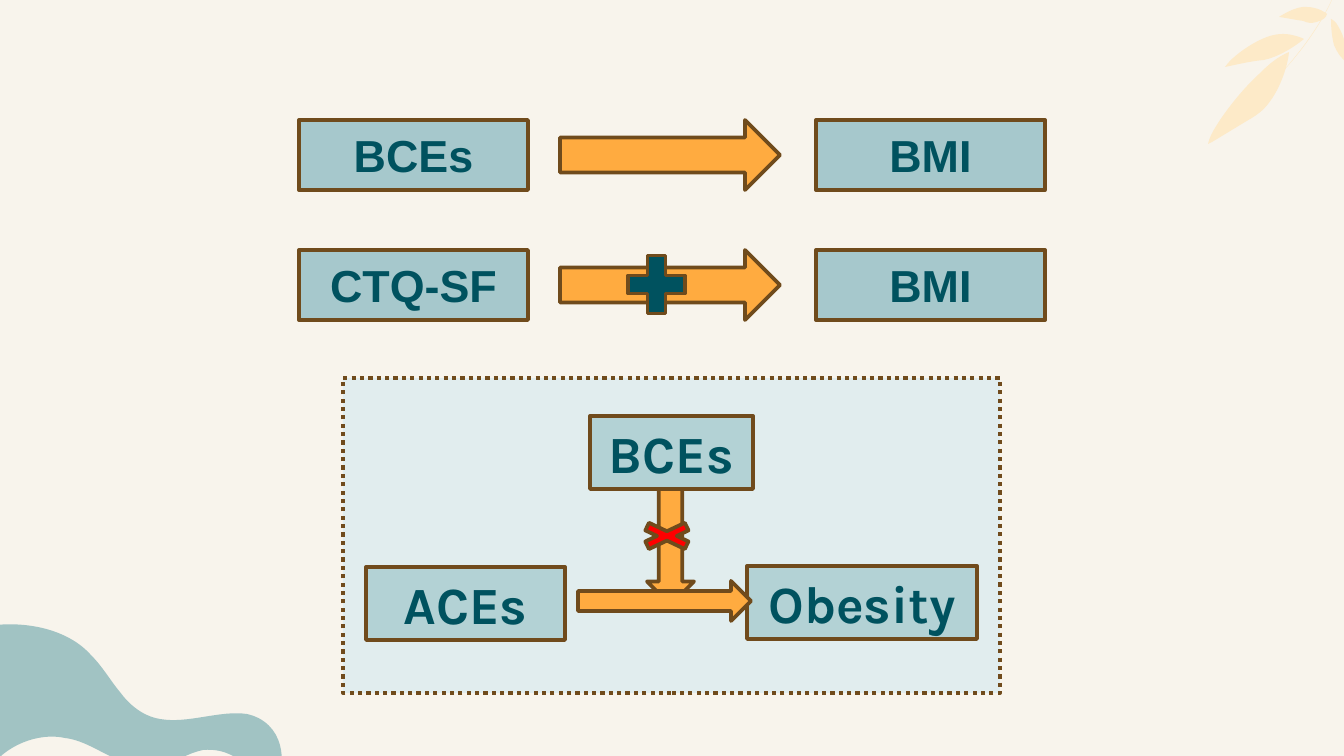
"""Build a slide of pathway diagrams linking childhood experiences to body mass."""
from dataclasses import dataclass
from typing import Optional

import lxml.etree
import pptx
import pptx.dml.color
import pptx.enum.dml
import pptx.enum.shapes
import pptx.enum.text
import pptx.oxml.ns
import pptx.util

RGB = pptx.dml.color.RGBColor
KIND = pptx.enum.shapes.MSO_SHAPE
PX = 914400 / 134.4

CREAM = RGB(0xF8, 0xF4, 0xEC)
LEAF = RGB(0xFD, 0xEA, 0xC8)
SEA = RGB(0x6B, 0xA4, 0xAA)
PANEL = RGB(0xE1, 0xED, 0xEE)
PALE_TEAL = RGB(0xB3, 0xD2, 0xD5)
TEAL = RGB(0xA6, 0xC8, 0xCC)
DARK_TEAL = RGB(0x00, 0x52, 0x5F)
ORANGE = RGB(0xFF, 0xAB, 0x40)
BROWN = RGB(0x70, 0x4B, 0x1C)
RED = RGB(0xFF, 0x00, 0x00)

Point = tuple[int, int]


@dataclass
class Block:
    kind: KIND
    x: int
    y: int
    w: int
    h: int
    fill: RGB
    text: str = ""
    font: str = "Arial"
    size: int = 24
    rotation: int = 0
    line: float = 2
    dash: Optional[pptx.enum.dml.MSO_LINE] = None


@dataclass
class Outline:
    start: Point
    segments: list[tuple[Point, ...]]
    fill: RGB
    alpha: int = 100


STEM = Outline((1335, -7), [
    ((1324, 18), (1303, 53), (1262, 93)), ((1303, 54), (1325, 18), (1335, -7))], LEAF)
LARGE_LEAF = Outline((1289, 52), [
    ((1277, 57), (1268, 65), (1258, 75)), ((1244, 88), (1231, 104), (1220, 120)),
    ((1215, 128), (1210, 135), (1208, 144)), ((1212, 142),), ((1245, 122),),
    ((1250, 119), (1254, 117), (1259, 113)), ((1275, 101), (1287, 72), (1289, 52))], LEAF)
MIDDLE_LEAF = Outline((1292, 35), [
    ((1284, 33), (1275, 34), (1267, 37)), ((1254, 42), (1242, 50), (1232, 59)),
    ((1229, 62), (1227, 64), (1225, 67)), ((1239, 64), (1252, 61), (1264, 60)),
    ((1278, 57), (1293, 48), (1304, 39)), ((1300, 37), (1296, 36), (1292, 35))], LEAF)
EDGE_LEAF = Outline((1331, 19), [
    ((1331, 28), (1332, 37), (1334, 45)), ((1337, 52), (1341, 59), (1348, 63)),
    ((1347, 50), (1345, 37), (1338, 26)), ((1336, 22), (1333, 20), (1331, 19))], LEAF)
TOP_LEAF = Outline((1314, 8), [
    ((1311, 7), (1306, 7), (1303, 7)), ((1295, 8), (1287, 12), (1279, 17)),
    ((1281, 17), (1283, 18), (1285, 18)), ((1291, 19), (1296, 20), (1303, 21)),
    ((1305, 22), (1308, 23), (1312, 23)), ((1317, 22), (1325, 21), (1327, 14)),
    ((1323, 11), (1319, 9), (1314, 8))], LEAF)
WAVE = Outline((280, 745), [
    ((282, 752), (282, 758), (282, 765)), ((255, 774),),
    ((241, 759), (226, 748), (203, 750)), ((188, 753), (176, 762), (163, 765)),
    ((144, 770), (126, 763), (112, 757)), ((97, 750), (82, 740), (65, 738)),
    ((38, 732), (4, 746), (-11, 770)), ((-12, 626),),
    ((27, 620), (69, 630), (91, 655)), ((103, 667), (110, 680), (120, 692)),
    ((129, 704), (142, 716), (160, 719)), ((188, 724), (220, 710), (247, 714)),
    ((265, 718), (276, 730), (280, 745))], SEA, 61)


def emu(px: int) -> int:
    """Turn px into EMU."""
    return round(px * PX)


def draw_outline(s: pptx.slide.Slide, outline: Outline) -> None:
    """Draw a filled organic outline, bending its segments into cubic curves."""
    qn = pptx.oxml.ns.qn
    anchors = [outline.start] + [segment[-1] for segment in outline.segments]
    builder = s.shapes.build_freeform(*outline.start, scale=PX)
    builder.add_line_segments(anchors[1:], close=True)
    sp = builder.convert_to_shape()
    left, top = (min(values) for values in zip(*anchors))
    lines = list(sp._element.iter(qn("a:lnTo")))
    for line, segment in zip(lines, outline.segments):
        if len(segment) == 3:
            curve = lxml.etree.Element(qn("a:cubicBezTo"))
            for x, y in segment:
                point = lxml.etree.SubElement(curve, qn("a:pt"))
                point.set("x", str(x - left))
                point.set("y", str(y - top))
            line.getparent().replace(line, curve)
    sp.shadow.inherit = False
    sp.fill.solid()
    sp.fill.fore_color.rgb = outline.fill
    sp.line.fill.background()
    if outline.alpha < 100:
        color = next(sp._element.spPr.iter(qn("a:srgbClr")))
        lxml.etree.SubElement(color, qn("a:alpha")).set("val", str(outline.alpha * 1000))


def draw_block(s: pptx.slide.Slide, block: Block) -> None:
    """Draw a preset shape with its label."""
    sp = s.shapes.add_shape(block.kind, *map(emu, (block.x, block.y, block.w, block.h)))
    sp.shadow.inherit = False
    sp.rotation = block.rotation
    sp.fill.solid()
    sp.fill.fore_color.rgb = block.fill
    sp.line.color.rgb = BROWN
    sp.line.width = pptx.util.Pt(block.line)
    if block.dash:
        sp.line.dash_style = block.dash
    if block.text:
        tf = sp.text_frame
        tf.text = block.text
        tf.vertical_anchor = pptx.enum.text.MSO_ANCHOR.MIDDLE
        p = tf.paragraphs[0]
        p.alignment = pptx.enum.text.PP_ALIGN.CENTER
        r = p.runs[0]
        r.font.name = block.font
        r.font.size = pptx.util.Pt(block.size)
        r.font.bold = True
        r.font.color.rgb = DARK_TEAL


def pathway(y: int, cause: str) -> list[Block]:
    """Return a row leading from a cause to BMI."""
    return [
        Block(KIND.RECTANGLE, 299, y, 229, 70, TEAL, cause),
        Block(KIND.RIGHT_ARROW, 560, y, 220, 70, ORANGE),
        Block(KIND.RECTANGLE, 816, y, 229, 70, TEAL, "BMI"),
    ]


def factor(x: int, y: int, w: int, text: str) -> Block:
    """Return a box of the moderation diagram."""
    return Block(KIND.RECTANGLE, x, y, w, 73, PALE_TEAL, text, "Karla", 28)


def main() -> None:
    """Build and save the slide."""
    prs = pptx.Presentation()
    prs.slide_width, prs.slide_height = emu(1344), emu(756)
    s = prs.slides.add_slide(prs.slide_layouts[6])
    s.background.fill.solid()
    s.background.fill.fore_color.rgb = CREAM
    for outline in (STEM, LARGE_LEAF, MIDDLE_LEAF, EDGE_LEAF, TOP_LEAF, WAVE):
        draw_outline(s, outline)
    blocks = [
        Block(KIND.RECTANGLE, 343, 378, 657, 315, PANEL, line=2.25,
              dash=pptx.enum.dml.MSO_LINE.ROUND_DOT),
        factor(747, 566, 230, "Obesity"),
        Block(KIND.RIGHT_ARROW, 594, 505, 153, 47, ORANGE, rotation=90),
        factor(590, 416, 163, "BCEs"),
        Block(KIND.RIGHT_ARROW, 578, 581, 173, 40, ORANGE),
        factor(366, 567, 199, "ACEs"),
        Block(KIND.MATH_MULTIPLY, 629, 518, 76, 36, RED),
        *pathway(120, "BCEs"),
        *pathway(250, "CTQ-SF"),
        Block(KIND.MATH_PLUS, 618, 245, 77, 79, DARK_TEAL),
    ]
    for block in blocks:
        draw_block(s, block)
    prs.save("out.pptx")


if __name__ == "__main__":
    main()
